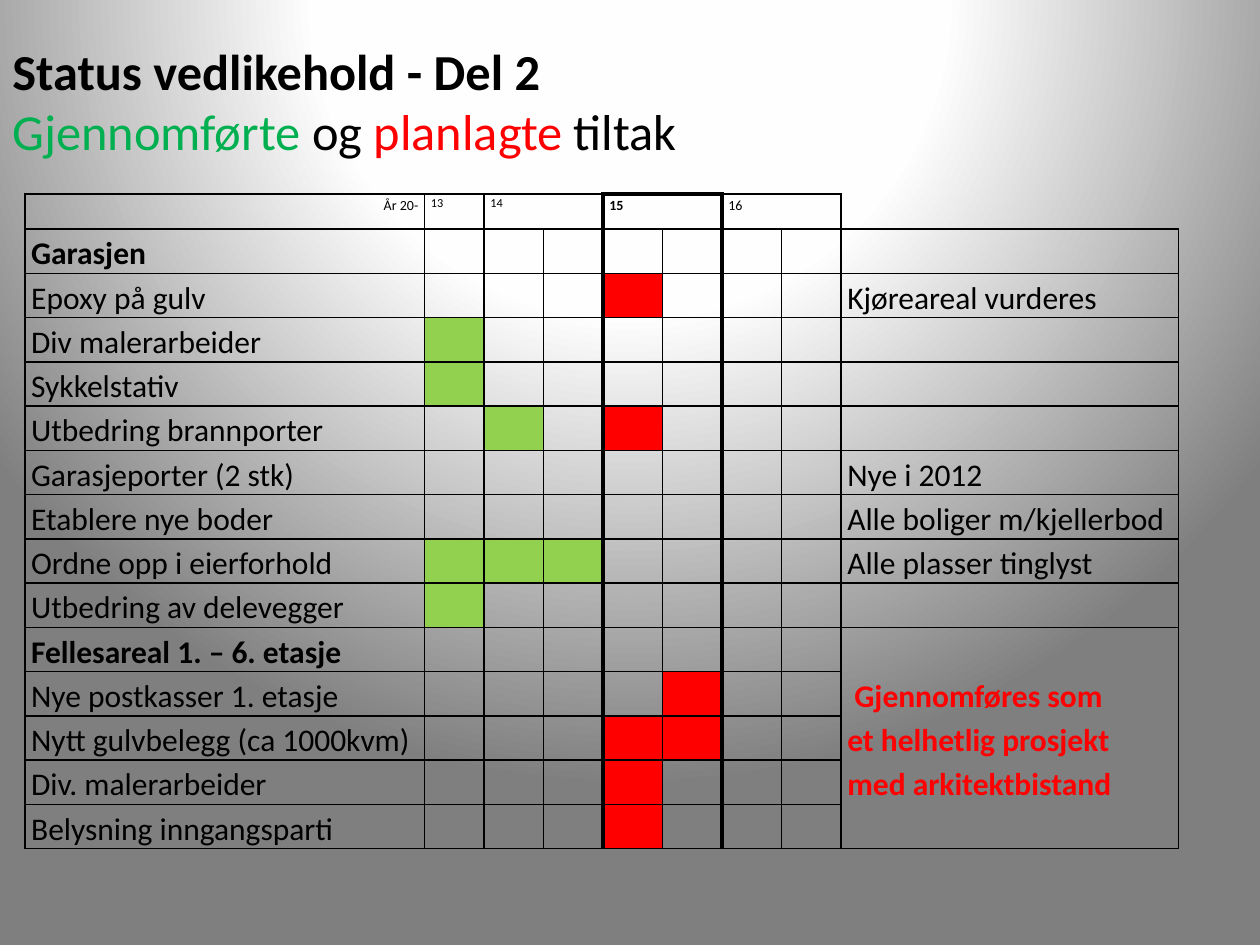
import pptx
import pptx.dml.color
import pptx.enum.text
import pptx.oxml
import pptx.oxml.ns
import pptx.util

Pt = pptx.util.Pt
FONT = "Calibri"
BLACK, RED, GREEN, DARK_GREEN = "000000", "FF0000", "92D050", "00B050"
HEADER_HEIGHT, ROW_HEIGHT = 20, 24.86
LABEL_WIDTH, PERIOD_WIDTH, NOTE_WIDTH = 228.5, 34, 192.7
PERIODS, NOTE_COLUMN = 7, 8
THIN, THICK = 1, 2.25
YEARS = [(1, 1, "13", 7, False), (2, 2, "14", 7, False),
         (4, 2, "15", 8, True), (6, 2, "16", 8, False)]
SECTIONS = ("Garasjen", "Fellesareal 1. – 6. etasje")
TASKS = [
    ("Garasjen", {}, ""),
    ("Epoxy på gulv", {4: RED}, "Kjøreareal vurderes"),
    ("Div malerarbeider", {1: GREEN}, ""),
    ("Sykkelstativ", {1: GREEN}, ""),
    ("Utbedring brannporter", {2: GREEN, 4: RED}, ""),
    ("Garasjeporter (2 stk)", {}, "Nye i 2012"),
    ("Etablere nye boder", {}, "Alle boliger m/kjellerbod"),
    ("Ordne opp i eierforhold", {1: GREEN, 2: GREEN, 3: GREEN}, "Alle plasser tinglyst"),
    ("Utbedring av delevegger", {1: GREEN}, ""),
    ("Fellesareal 1. – 6. etasje", {}, ""),
    ("Nye postkasser 1. etasje", {5: RED}, ""),
    ("Nytt gulvbelegg (ca 1000kvm)", {4: RED, 5: RED}, ""),
    ("Div. malerarbeider", {4: RED}, ""),
    ("Belysning inngangsparti", {4: RED}, ""),
]
PROJECT_ROW = 10
PROJECT_NOTE = [" Gjennomføres som", "et helhetlig prosjekt", "med arkitektbistand"]


def color(value):
    """Return the colour for a hex string."""
    return pptx.dml.color.RGBColor.from_string(value)


def add_span(para, text, size, bold=False, fill=BLACK):
    """Add one formatted run to a paragraph."""
    span = para.add_run()
    span.text = text
    span.font.name, span.font.size, span.font.bold = FONT, Pt(size), bold
    span.font.color.rgb = color(fill)


def set_background(page):
    """Give the page a circular gradient centred above its top edge."""
    stops = "".join(
        f'<a:gs pos="{position * 1000}"><a:srgbClr val="{value}"/></a:gs>'
        for position, value in ((0, "FFFFFF"), (40, "FEFEFE"), (100, "7F7F7F")))
    page._element.cSld.insert(0, pptx.oxml.parse_xml(
        f'<p:bg {pptx.oxml.ns.nsdecls("p", "a")}><p:bgPr><a:gradFill rotWithShape="1">'
        f'<a:gsLst>{stops}</a:gsLst><a:path path="circle">'
        '<a:fillToRect l="50000" t="-80000" r="50000" b="180000"/></a:path>'
        '</a:gradFill><a:effectLst/></p:bgPr></p:bg>'))


def add_title(page, left, top, width, height):
    """Place the two-line heading."""
    box = page.shapes.add_textbox(Pt(left), Pt(top), Pt(width), Pt(height))
    frame = box.text_frame
    frame.word_wrap = True
    frame.vertical_anchor = pptx.enum.text.MSO_ANCHOR.MIDDLE
    para = frame.paragraphs[0]
    add_span(para, "Status vedlikehold - Del 2", 28.8, True)
    para.add_line_break()
    for text, fill in (("Gjennomførte", DARK_GREEN), (" og ", BLACK),
                       ("planlagte", RED), (" tiltak", BLACK)):
        add_span(para, text, 28.8, fill=fill)


def set_borders(cell, row, column):
    """Draw the cell edges, heavier around the current year."""
    end = column + (cell.span_width if cell.is_merge_origin else 1)
    outside = row == 0 and column == NOTE_COLUMN
    edges = {
        "lnL": THICK if column in (4, 6) else THIN,
        "lnR": 0 if outside else THICK if end in (4, 6) else THIN,
        "lnT": 0 if outside else THICK if row == 0 and column in (4, 5) else THIN,
        "lnB": THIN,
    }
    properties = cell._tc.get_or_add_tcPr()
    for index, (name, width) in enumerate(edges.items()):
        fill = f'<a:solidFill><a:srgbClr val="{BLACK}"/></a:solidFill>' if width else "<a:noFill/>"
        properties.insert(index, pptx.oxml.parse_xml(
            f'<a:{name} {pptx.oxml.ns.nsdecls("a")} w="{Pt(width)}">{fill}</a:{name}>'))


def style_cell(cell, row, column, fill):
    """Set margins, fill, borders and empty-line size of a cell."""
    cell.margin_left = cell.margin_right = Pt(3.6)
    cell.margin_top = cell.margin_bottom = Pt(0)
    if fill:
        cell.fill.solid()
        cell.fill.fore_color.rgb = color(fill)
    else:
        cell.fill.background()
    set_borders(cell, row, column)
    if not cell.text_frame.text:
        end = cell.text_frame.paragraphs[0]._p.get_or_add_endParaRPr()
        end.set("sz", "800")


def write_cell(cell, lines, size, bold=False, fill=BLACK):
    """Write each line as a paragraph of the cell."""
    frame = cell.text_frame
    for index, line in enumerate(lines):
        para = frame.add_paragraph() if index else frame.paragraphs[0]
        para.line_spacing = 1.15
        add_span(para, line, size, bold, fill)


def add_plan(page, left, top):
    """Place the maintenance schedule table."""
    widths = [LABEL_WIDTH] + [PERIOD_WIDTH] * PERIODS + [NOTE_WIDTH]
    heights = [HEADER_HEIGHT] + [ROW_HEIGHT] * len(TASKS)
    table = page.shapes.add_table(len(heights), len(widths), Pt(left), Pt(top),
                                  Pt(sum(widths)), Pt(sum(heights))).table
    table.first_row = table.horz_banding = False
    for column, width in zip(table.columns, widths):
        column.width = Pt(width)
    for row, height in zip(table.rows, heights):
        row.height = Pt(height)

    write_cell(table.cell(0, 0), ["År 20-"], 8)
    table.cell(0, 0).text_frame.paragraphs[0].alignment = pptx.enum.text.PP_ALIGN.RIGHT
    for column, count, year, size, bold in YEARS:
        cell = table.cell(0, column)
        if count > 1:
            cell.merge(table.cell(0, column + count - 1))
        write_cell(cell, [year], size, bold)
    for row, (label, _, note) in enumerate(TASKS, 1):
        write_cell(table.cell(row, 0), [label], 18, label in SECTIONS)
        if note:
            write_cell(table.cell(row, NOTE_COLUMN), [note], 18)
    project = table.cell(PROJECT_ROW, NOTE_COLUMN)
    project.merge(table.cell(len(TASKS), NOTE_COLUMN))
    project.vertical_anchor = pptx.enum.text.MSO_ANCHOR.MIDDLE
    write_cell(project, PROJECT_NOTE, 18, True, RED)

    for row in range(len(heights)):
        marks = TASKS[row - 1][1] if row else {}
        for column in range(len(widths)):
            style_cell(table.cell(row, column), row, column, marks.get(column))


def main():
    """Build and save the deck."""
    deck = pptx.Presentation()
    deck.slide_width, deck.slide_height = Pt(720), Pt(540)
    page = deck.slides.add_slide(deck.slide_layouts[6])
    set_background(page)
    add_plan(page, 14.2, 110.9)
    add_title(page, 0, 21.6, 648, 71.3)
    deck.save("out.pptx")


if __name__ == "__main__":
    main()
